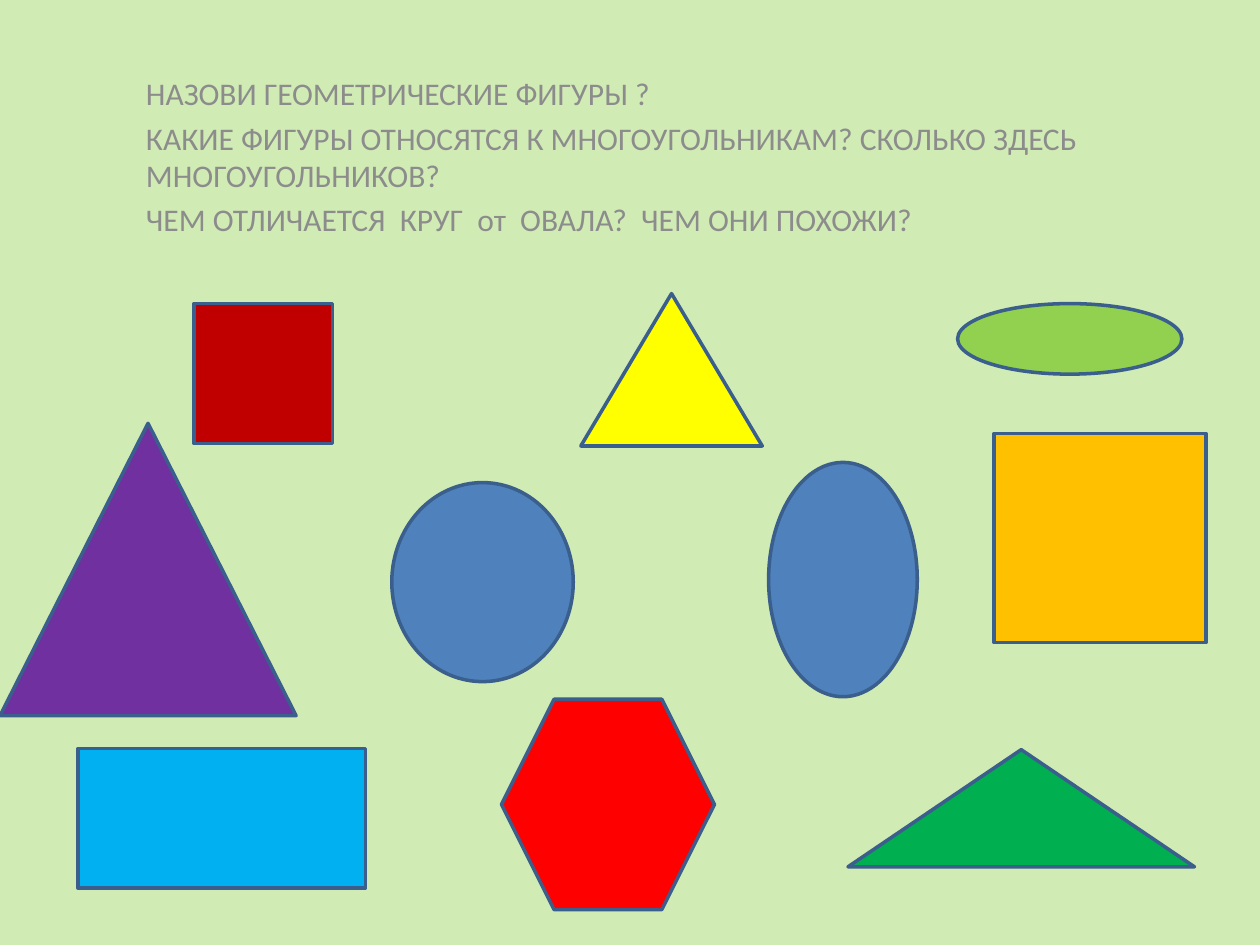
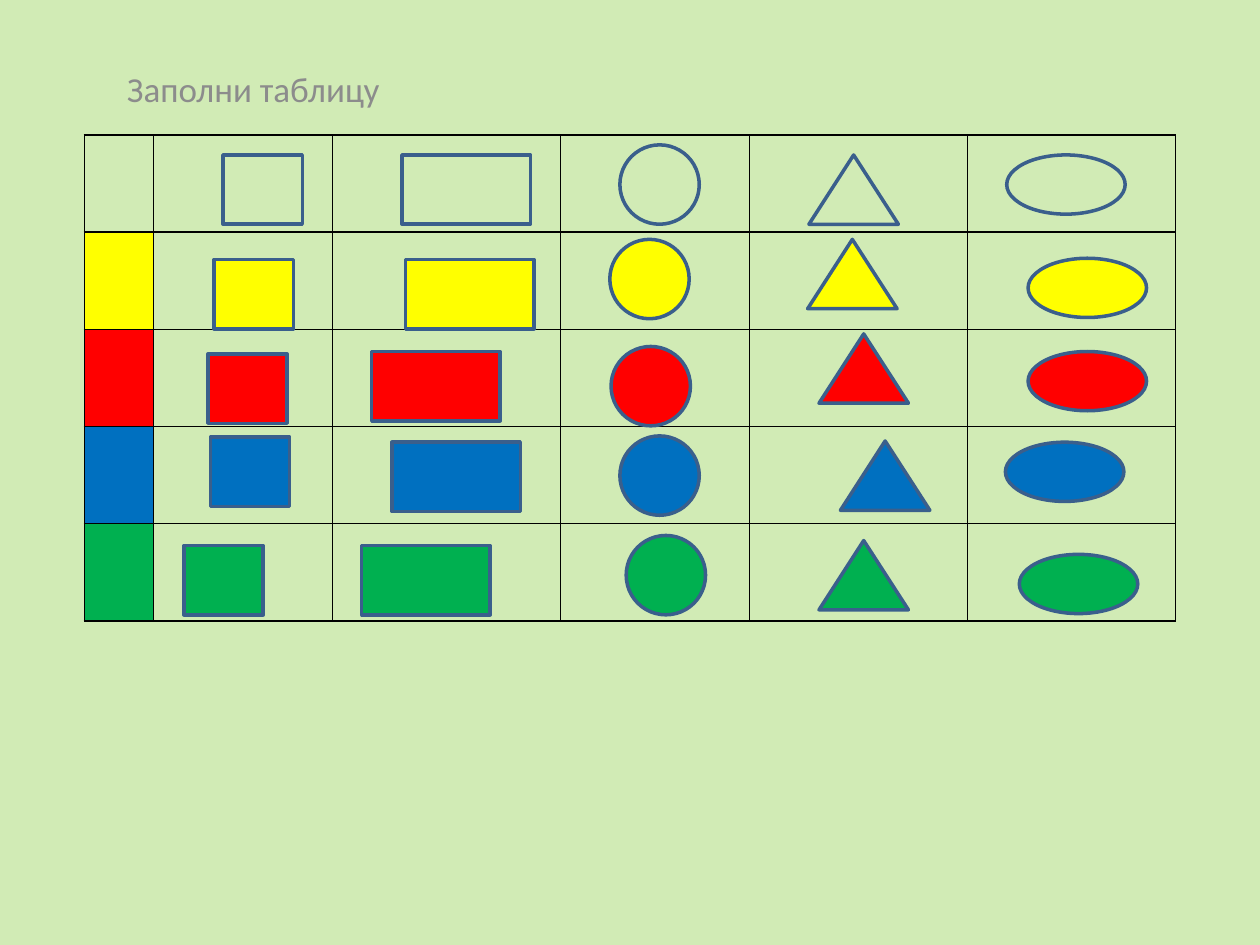
from dataclasses import dataclass
from typing import NamedTuple

from lxml.etree import SubElement
from pptx import Presentation
from pptx.dml.color import RGBColor
from pptx.enum.shapes import MSO_SHAPE as Preset
from pptx.enum.text import MSO_ANCHOR as Anchor
from pptx.oxml.ns import qn
from pptx.slide import Slide
from pptx.table import _Cell as Cell
from pptx.util import Inches, Pt


@dataclass(frozen=True)
class Theme:
    font: str = "Calibri"
    background: str = "D1EBB5"
    text: str = "8C8C8C"
    outline: str = "3A5F8C"
    grid: str = "000000"
    yellow: str = "FFFF00"
    red: str = "FF0000"
    blue: str = "0070C0"
    green: str = "00B050"
    dark_red: str = "C00000"
    sky: str = "00B0F0"
    orange: str = "FFC000"
    steel: str = "4F81BD"
    lime: str = "92D050"
    purple: str = "7030A0"
    question_size: int = 18
    task_size: int = 20
    outline_width: int = 2
    grid_width: int = 1


THEME = Theme()


class Box(NamedTuple):
    left: float
    top: float
    width: float
    height: float


class Figure(NamedTuple):
    preset: Preset
    box: Box
    fill: str | None


class FigureColumn(NamedTuple):
    """One kind of figure and its left-top corner in every table row."""
    preset: Preset
    width: float
    height: float
    corners: tuple[tuple[float, float], ...]


QUESTIONS = (
    "НАЗОВИ ГЕОМЕТРИЧЕСКИЕ ФИГУРЫ ?",
    "КАКИЕ ФИГУРЫ ОТНОСЯТСЯ К МНОГОУГОЛЬНИКАМ? СКОЛЬКО ЗДЕСЬ МНОГОУГОЛЬНИКОВ?",
    "ЧЕМ ОТЛИЧАЕТСЯ  КРУГ  от  ОВАЛА?  ЧЕМ ОНИ ПОХОЖИ?",
)

FIGURES = (
    Figure(Preset.RECTANGLE, Box(1.54, 2.41, 1.1, 1.11), THEME.dark_red),
    Figure(Preset.RECTANGLE, Box(0.62, 5.94, 2.28, 1.11), THEME.sky),
    Figure(Preset.RECTANGLE, Box(7.89, 3.44, 1.68, 1.66), THEME.orange),
    Figure(Preset.OVAL, Box(3.11, 3.83, 1.44, 1.58), THEME.steel),
    Figure(Preset.OVAL, Box(6.1, 3.67, 1.18, 1.86), THEME.steel),
    Figure(Preset.OVAL, Box(7.6, 2.41, 1.78, 0.56), THEME.lime),
    Figure(Preset.ISOSCELES_TRIANGLE, Box(4.61, 2.33, 1.44, 1.21), THEME.yellow),
    Figure(Preset.ISOSCELES_TRIANGLE, Box(6.73, 5.95, 2.75, 0.93), THEME.green),
    Figure(Preset.HEXAGON, Box(3.98, 5.55, 1.69, 1.67), THEME.red),
    Figure(Preset.ISOSCELES_TRIANGLE, Box(0, 3.36, 2.35, 2.32), THEME.purple),
)

ROW_COLORS = (None, THEME.yellow, THEME.red, THEME.blue, THEME.green)
COLUMN_WIDTHS = (0.55, 1.42, 1.81, 1.5, 1.73, 1.65)
TABLE_BOX = Box(0.67, 1.07, sum(COLUMN_WIDTHS), 3.86)

FIGURE_COLUMNS = (
    FigureColumn(Preset.RECTANGLE, 0.63, 0.55,
                 ((1.77, 1.23), (1.7, 2.06), (1.65, 2.81), (1.67, 3.47), (1.46, 4.33))),
    FigureColumn(Preset.RECTANGLE, 1.02, 0.55,
                 ((3.19, 1.23), (3.22, 2.06), (2.95, 2.79), (3.11, 3.51), (2.87, 4.33))),
    FigureColumn(Preset.OVAL, 0.63, 0.63,
                 ((4.92, 1.15), (4.84, 1.9), (4.85, 2.75), (4.92, 3.46), (4.97, 4.25))),
    FigureColumn(Preset.ISOSCELES_TRIANGLE, 0.71, 0.55,
                 ((6.42, 1.23), (6.41, 1.9), (6.5, 2.65), (6.67, 3.5), (6.5, 4.29))),
    FigureColumn(Preset.OVAL, 0.94, 0.47,
                 ((7.99, 1.23), (8.16, 2.05), (8.16, 2.79), (7.98, 3.51), (8.09, 4.4))),
)


def rgb(color: str) -> RGBColor:
    return RGBColor.from_string(color)


def inches(box: Box) -> list[Inches]:
    return [Inches(length) for length in box]


def paint(fill, color: str | None) -> None:
    """Fill solidly, or leave see-through when there is no color."""
    if color is None:
        fill.background()
    else:
        fill.solid()
        fill.fore_color.rgb = rgb(color)


def add_page(deck: Presentation) -> Slide:
    page = deck.slides.add_slide(deck.slide_layouts[6])
    paint(page.background.fill, THEME.background)
    return page


def add_heading(page: Slide, box: Box, lines: tuple[str, ...], size: int) -> None:
    frame = page.shapes.add_textbox(*inches(box)).text_frame
    frame.word_wrap = True
    frame.vertical_anchor = Anchor.BOTTOM
    frame.text = "\n".join(lines)
    for para in frame.paragraphs:
        para.space_before = Pt(size * 0.2)
        para.font.name = THEME.font
        para.font.size = Pt(size)
        para.font.color.rgb = rgb(THEME.text)


def add_figure(page: Slide, figure: Figure) -> None:
    shape = page.shapes.add_shape(figure.preset, *inches(figure.box))
    shape.shadow.inherit = False
    paint(shape.fill, figure.fill)
    shape.line.color.rgb = rgb(THEME.outline)
    shape.line.width = Pt(THEME.outline_width)


def add_borders(cell: Cell) -> None:
    properties = cell._tc.get_or_add_tcPr()
    for side in ("lnL", "lnR", "lnT", "lnB"):
        line = SubElement(properties, qn(f"a:{side}"), w=str(Pt(THEME.grid_width)))
        fill = SubElement(line, qn("a:solidFill"))
        SubElement(fill, qn("a:srgbClr"), val=THEME.grid)


def add_color_table(page: Slide) -> None:
    """Draw the grid, with the color of each row in its first cell."""
    table = page.shapes.add_table(
        len(ROW_COLORS), len(COLUMN_WIDTHS), *inches(TABLE_BOX)).table
    table.first_row = False
    table.horz_banding = False
    for column, width in zip(table.columns, COLUMN_WIDTHS):
        column.width = Inches(width)
    for row, color in zip(table.rows, ROW_COLORS):
        for index, cell in enumerate(row.cells):
            add_borders(cell)
            paint(cell.fill, color if index == 0 else None)


def build_questions(deck: Presentation) -> None:
    page = add_page(deck)
    add_heading(page, Box(1.06, 0, 8.88, 1.94), QUESTIONS, THEME.question_size)
    for figure in FIGURES:
        add_figure(page, figure)


def build_table_task(deck: Presentation) -> None:
    page = add_page(deck)
    add_heading(page, Box(0.91, 0.13, 8.5, 0.79), ("Заполни таблицу",), THEME.task_size)
    add_color_table(page)
    for column in FIGURE_COLUMNS:
        for (left, top), color in zip(column.corners, ROW_COLORS):
            box = Box(left, top, column.width, column.height)
            add_figure(page, Figure(column.preset, box, color))


def main() -> None:
    deck = Presentation()
    deck.slide_width, deck.slide_height = Inches(10), Inches(7.5)
    build_questions(deck)
    build_table_task(deck)
    deck.save("out.pptx")


if __name__ == "__main__":
    main()
